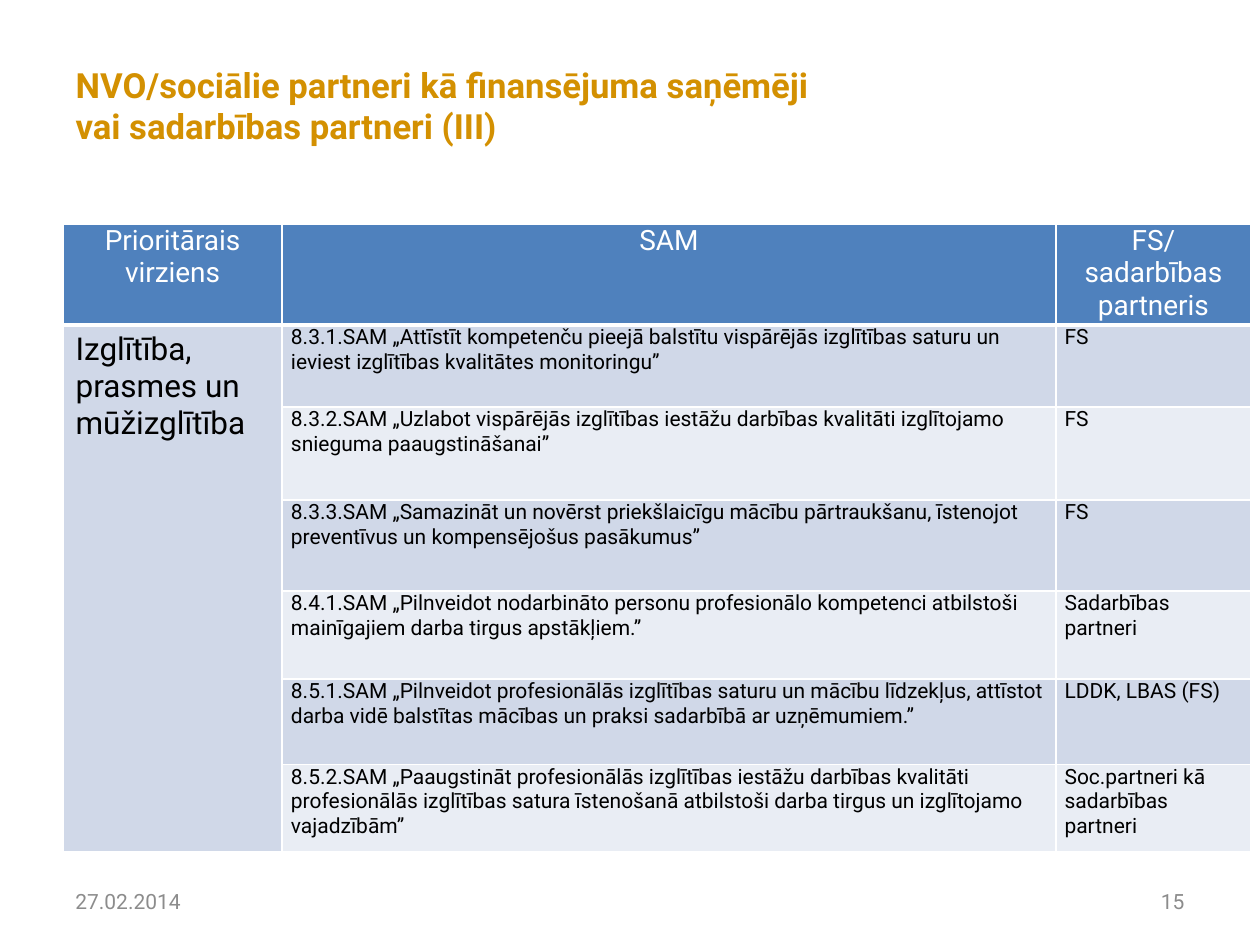
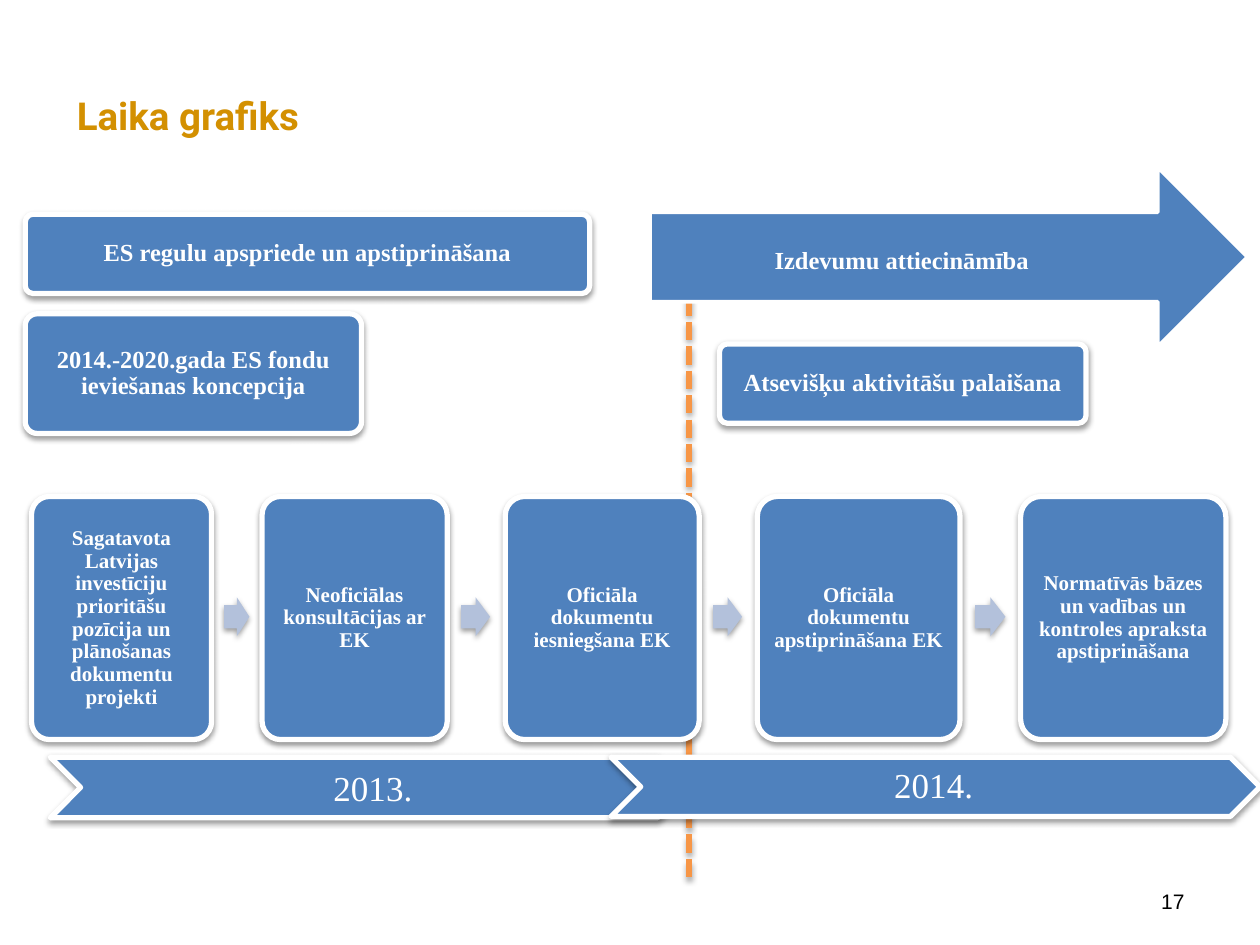
from lxml import etree
from pptx import Presentation
from pptx.dml.color import RGBColor
from pptx.enum import dml, shapes, text
from pptx.oxml.ns import qn
from pptx.util import Pt

PX = 9144  # 100 px to the inch
GOLD = RGBColor(0xD3, 0x90, 0x01)
BLUE = RGBColor(0x4F, 0x81, 0xBD)
PALE_ARROW = RGBColor(0xB3, 0xC1, 0xDB)
BAND_DARK = RGBColor(0xD0, 0xD8, 0xE8)
BAND_LIGHT = RGBColor(0xE9, 0xED, 0xF4)
ORANGE = RGBColor(0xF7, 0x96, 0x46)
GREY = RGBColor(0x8C, 0x8C, 0x8C)
WHITE = RGBColor(0xFF, 0xFF, 0xFF)
BLACK = RGBColor(0, 0, 0)
SANS, SERIF = "Roboto", "Times New Roman"
LEFT, CENTER, RIGHT = text.PP_ALIGN.LEFT, text.PP_ALIGN.CENTER, text.PP_ALIGN.RIGHT
MIDDLE, TOP = text.MSO_ANCHOR.MIDDLE, text.MSO_ANCHOR.TOP
ROUNDED = shapes.MSO_SHAPE.ROUNDED_RECTANGLE
ARROW = shapes.MSO_SHAPE.RIGHT_ARROW
CHEVRON = shapes.MSO_SHAPE.CHEVRON


def write(frame, words, size, color, font=SANS, bold=False, align=LEFT,
          margins=(10, 5, 10, 5), anchor=MIDDLE, spacing=1.0):
    """Fill a text frame or a table cell's frame owner with one formatted run."""
    frame.margin_left, frame.margin_top, frame.margin_right, frame.margin_bottom = (
        margin * PX for margin in margins)
    frame.vertical_anchor = anchor
    text_frame = getattr(frame, "text_frame", frame)
    text_frame.word_wrap = True
    paragraph = text_frame.paragraphs[0]
    paragraph.alignment = align
    paragraph.line_spacing = spacing
    run = paragraph.add_run()
    run.text = words
    run.font.name, run.font.size, run.font.bold = font, Pt(size), bold
    run.font.color.rgb = color


def add_shadow(shape, distance=1.6, opacity=38):
    """Drop a soft shadow straight below a shape or connector."""
    effects = etree.SubElement(shape._element.spPr, qn("a:effectLst"))
    shadow = etree.SubElement(effects, qn("a:outerShdw"), blurRad=str(Pt(3.1)),
                              dist=str(Pt(distance)), dir="5400000", rotWithShape="0")
    color = etree.SubElement(shadow, qn("a:srgbClr"), val="000000")
    etree.SubElement(color, qn("a:alpha"), val=str(opacity * 1000))


presentation = Presentation()
presentation.slide_width, presentation.slide_height = 1000 * PX, 750 * PX

# Titles and footers of both slides
DATE_LEFT, NUMBER_LEFT = 50, 717
slide_frames = [
    ("NVO/sociālie partneri kā finansējuma saņēmēji vai sadarbības partneri (III)",
     19.8, (50, 44, 622, 79),
     [("27.02.2014", DATE_LEFT, LEFT, SANS, GREY), ("15", NUMBER_LEFT, RIGHT, SANS, GREY)]),
    ("Laika grafiks", 22, (51, 68, 622, 47),
     [("17", NUMBER_LEFT, RIGHT, "Arial", BLACK)]),
]
for heading, size, place, footers in slide_frames:
    slide = presentation.slides.add_slide(presentation.slide_layouts[5])
    title = slide.shapes.title
    title.left, title.top, title.width, title.height = (n * PX for n in place)
    title.text_frame.auto_size = text.MSO_AUTO_SIZE.NONE
    write(title.text_frame, heading, size, GOLD, bold=True)
    for words, left, align, font, color in footers:
        footer = slide.shapes.add_textbox(left * PX, 695 * PX, 233 * PX, 40 * PX)
        write(footer.text_frame, words, 12, color, font, align=align)
table_slide, timeline_slide = presentation.slides

# Table of objectives and partners
headers = ["Prioritārais virziens", "SAM", "FS/sadarbības partneris"]
objectives = [
    ("8.3.1.SAM „Attīstīt kompetenču pieejā balstītu vispārējās izglītības saturu un "
     "ieviest izglītības kvalitātes monitoringu”", "FS"),
    ("8.3.2.SAM „Uzlabot vispārējās izglītības iestāžu darbības kvalitāti izglītojamo "
     "snieguma paaugstināšanai”", "FS"),
    ("8.3.3.SAM „Samazināt un novērst priekšlaicīgu mācību pārtraukšanu, īstenojot "
     "preventīvus un kompensējošus pasākumus”", "FS"),
    ("8.4.1.SAM „Pilnveidot nodarbināto personu profesionālo kompetenci atbilstoši "
     "mainīgajiem darba tirgus apstākļiem.”", "Sadarbības partneri"),
    ("8.5.1.SAM „Pilnveidot profesionālās izglītības saturu un mācību līdzekļus, attīstot "
     "darba vidē balstītas mācības un praksi sadarbībā ar uzņēmumiem.”", "LDDK, LBAS (FS)"),
    ("8.5.2.SAM „Paaugstināt profesionālās izglītības iestāžu darbības kvalitāti "
     "profesionālās izglītības satura īstenošanā atbilstoši darba tirgus un izglītojamo "
     "vajadzībām”", "Soc.partneri kā sadarbības partneri"),
]
column_widths = [174, 614, 155]
row_heights = [48, 65, 74, 72, 70, 68, 69]
table = table_slide.shapes.add_table(
    len(row_heights), len(column_widths), 50 * PX, 178 * PX,
    sum(column_widths) * PX, sum(row_heights) * PX).table
table.horz_banding = False
for column, width in zip(table.columns, column_widths):
    column.width = width * PX
for row, height in zip(table.rows, row_heights):
    row.height = height * PX

TIGHT = (7, 0, 7, 0)
for column, words in enumerate(headers):
    write(table.cell(0, column), words, 16, WHITE, align=CENTER, margins=TIGHT, anchor=TOP)
write(table.cell(1, 0), "Izglītība, prasmes un mūžizglītība", 18, BLACK, anchor=TOP)
for row, objective in enumerate(objectives, 1):
    for column, words in enumerate(objective, 1):
        write(table.cell(row, column), words, 12, BLACK, margins=TIGHT, anchor=TOP)
table.cell(1, 0).merge(table.cell(len(objectives), 0))

# White cell borders, heavier under the header, and banded fills
for row in range(len(row_heights)):
    for column in range(len(column_widths)):
        cell = table.cell(row, column)
        properties = cell._tc.get_or_add_tcPr()
        for side in "LRTB":
            under_header = (row, side) in [(0, "B"), (1, "T")]
            border = etree.SubElement(properties, qn("a:ln" + side),
                                      w=str(Pt(3 if under_header else 1)))
            paint = etree.SubElement(border, qn("a:solidFill"))
            etree.SubElement(paint, qn("a:srgbClr"), val=str(WHITE))
        cell.fill.solid()
        if row == 0:
            cell.fill.fore_color.rgb = BLUE
        else:
            cell.fill.fore_color.rgb = BAND_DARK if column == 0 or row % 2 else BAND_LIGHT

# Dashed line that marks the present
today = timeline_slide.shapes.add_connector(
    shapes.MSO_CONNECTOR.STRAIGHT, 547 * PX, 178 * PX, 547 * PX, 698 * PX)
today.line.color.rgb = ORANGE
today.line.width = Pt(3.5)
today.line.dash_style = dml.MSO_LINE.SQUARE_DOT
add_shadow(today, 1.8, 35)

# Steps of the process: left, width, words
steps = [
    (25, 143, "Sagatavota Latvijas investīciju prioritāšu pozīcija un plānošanas "
              "dokumentu projekti"),
    (208, 147, "Neoficiālas konsultācijas ar EK"),
    (401, 154, "Oficiāla dokumentu iesniegšana EK"),
    (601, 161, "Oficiāla dokumentu apstiprināšana EK"),
    (810, 163, "Normatīvās bāzes un vadības un kontroles apraksta apstiprināšana"),
]

# Blue blocks: kind, place, words, size, margins
EVEN = (6, 6, 6, 6)
blocks = [
    (ROUNDED, (571, 273, 291, 63), "Atsevišķu aktivitāšu palaišana", 14, EVEN),
    (ROUNDED, (20, 249, 267, 95), "2014.-2020.gada ES fondu ieviešanas koncepcija", 14, EVEN),
    (ROUNDED, (20, 170, 448, 63), "ES regulu apspriede un apstiprināšana", 14, EVEN),
    (ARROW, (516, 133, 474, 142), "Izdevumu attiecināmība", 14, (0, 16, 39, 9)),
    (CHEVRON, (40, 601, 506, 48), "2013.", 20, (9, 3, 3, 3)),
    (CHEVRON, (485, 601, 515, 47), "2014.", 20, (3, 0, 6, 4)),
]
blocks += [(ROUNDED, (left, 394, width, 193), words, 12, EVEN) for left, width, words in steps]
for kind, place, words, size, margins in blocks:
    block = timeline_slide.shapes.add_shape(kind, *(n * PX for n in place))
    block.fill.solid()
    block.fill.fore_color.rgb = BLUE
    block.line.color.rgb = WHITE
    block.line.width = Pt(2 if kind == ARROW else 3)
    if kind == ROUNDED:
        block.adjustments[0] = 0.1
    if kind == ARROW:
        block.shadow.inherit = False
    else:
        add_shadow(block)
    write(block.text_frame, words, size, WHITE, SERIF, bold=kind != CHEVRON, align=CENTER,
          margins=margins, spacing=1.0 if kind == CHEVRON else 0.9)

# Pale arrows centred in the gaps between steps
for (left, width, _), (next_left, _, _) in zip(steps, steps[1:]):
    gap = next_left - left - width
    arrow = timeline_slide.shapes.add_shape(
        ARROW, (left + width + gap // 4) * PX, 474 * PX, gap // 2 * PX, 31 * PX)
    arrow.adjustments[0] = 0.6
    arrow.fill.solid()
    arrow.fill.fore_color.rgb = PALE_ARROW
    arrow.line.fill.background()
    add_shadow(arrow)

presentation.save("out.pptx")
